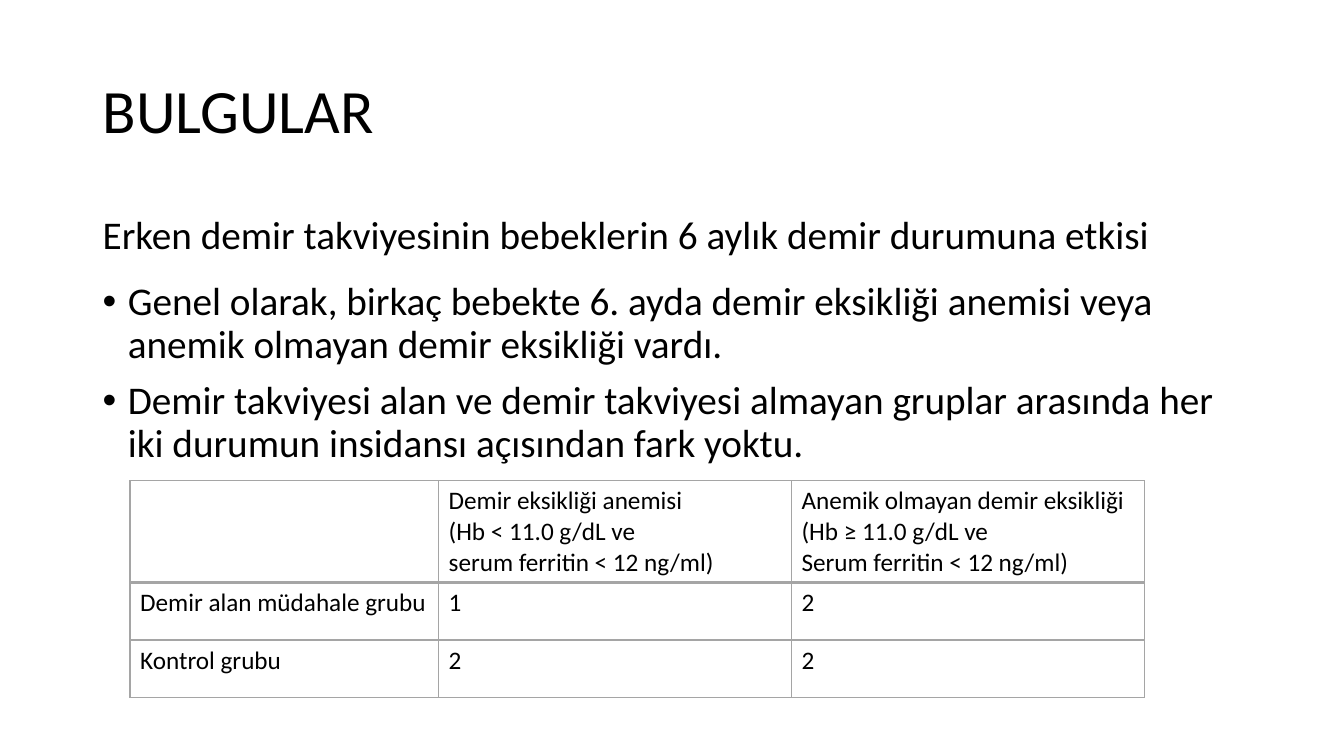
from lxml.etree import SubElement
from pptx import Presentation
from pptx.dml.color import RGBColor
from pptx.enum.text import MSO_ANCHOR, MSO_AUTO_SIZE, PP_ALIGN
from pptx.oxml import parse_xml
from pptx.oxml.ns import nsdecls, qn
from pptx.util import Inches, Pt

BLACK = RGBColor(0x00, 0x00, 0x00)
GREY = RGBColor(0xA5, 0xA5, 0xA5)
FONT = "Calibri"


def write(para, text, size):
    span = para.add_run()
    span.text = text
    span.font.name = FONT
    span.font.size = Pt(size)
    span.font.bold = False
    span.font.color.rgb = BLACK


def add_border(cell, side, position, width):
    """Insert one cell border; position keeps the schema order before the fill."""
    line = parse_xml(
        f'<a:{side} {nsdecls("a")} w="{Pt(width)}"><a:solidFill>'
        f'<a:srgbClr val="{GREY}"/></a:solidFill></a:{side}>')
    cell._tc.get_or_add_tcPr().insert(position, line)


deck = Presentation()
deck.slide_width = Inches(13.33)
deck.slide_height = Inches(7.5)
page = deck.slides.add_slide(deck.slide_layouts[5])

# Title
title = page.shapes.title
title_place = {"left": 0.92, "top": 0.4, "width": 11.5, "height": 1.45}
for name, value in title_place.items():
    setattr(title, name, Inches(value))
title.text_frame.auto_size = MSO_AUTO_SIZE.NONE
title.text_frame.vertical_anchor = MSO_ANCHOR.MIDDLE
heading = title.text_frame.paragraphs[0]
heading.alignment = PP_ALIGN.LEFT
heading.line_spacing = 0.9
write(heading, "BULGULAR", 44)

# Findings
lead_format = {"line_spacing": 1.07, "space_before": Pt(10), "space_after": Pt(8)}
bullet_format = {"line_spacing": 0.9, "space_before": Pt(10), "space_after": Pt(0)}
findings = [
    ("Erken demir takviyesinin bebeklerin 6 aylık demir durumuna etkisi", lead_format),
    ("Genel olarak, birkaç bebekte 6. ayda demir eksikliği anemisi veya "
     "anemik olmayan demir eksikliği vardı.", bullet_format),
    ("Demir takviyesi alan ve demir takviyesi almayan gruplar arasında her "
     "iki durumun insidansı açısından fark yoktu.", bullet_format),
]
body = page.shapes.add_textbox(Inches(0.92), Inches(2), Inches(11.5), Inches(4.76))
frame = body.text_frame
frame.word_wrap = True
for index, (text, formatting) in enumerate(findings):
    para = frame.add_paragraph() if index else frame.paragraphs[0]
    for name, value in formatting.items():
        setattr(para, name, value)
    if formatting is bullet_format:
        properties = para._p.get_or_add_pPr()
        properties.set("marL", str(Inches(0.25)))
        properties.set("indent", str(Inches(-0.25)))
        SubElement(properties, qn("a:buFont"), typeface="Arial")
        SubElement(properties, qn("a:buChar"), char="•")
    write(para, text, 28)

# Iron status table
rows = [
    ["",
     "Demir eksikliği anemisi\n(Hb < 11.0 g/dL ve\nserum ferritin < 12 ng/ml)",
     "Anemik olmayan demir eksikliği\n(Hb ≥ 11.0 g/dL ve\nSerum ferritin < 12 ng/ml)"],
    ["Demir alan müdahale grubu", "1", "2"],
    ["Kontrol grubu", "2", "2"],
]
column_widths = [3.06, 3.5, 3.5]
row_heights = [1.01, 0.57, 0.57]
table = page.shapes.add_table(
    len(rows), len(column_widths), Inches(1.29), Inches(4.77),
    Inches(sum(column_widths)), Inches(sum(row_heights))).table
table.first_row = False
table.horz_banding = False
for column, width in zip(table.columns, column_widths):
    column.width = Inches(width)
for row, height in zip(table.rows, row_heights):
    row.height = Inches(height)

for row_index, texts in enumerate(rows):
    for column_index, text in enumerate(texts):
        cell = table.cell(row_index, column_index)
        cell.fill.background()
        border_widths = {
            "lnL": 1,
            "lnR": 1,
            "lnT": 2 if row_index == 1 else 1,
            "lnB": 2 if row_index == 0 else 1,
        }
        for position, (side, width) in enumerate(border_widths.items()):
            add_border(cell, side, position, width)
        for index, line in enumerate(text.split("\n")):
            para = cell.text_frame.add_paragraph() if index else cell.text_frame.paragraphs[0]
            if line:
                write(para, line, 18)

deck.save("out.pptx")
